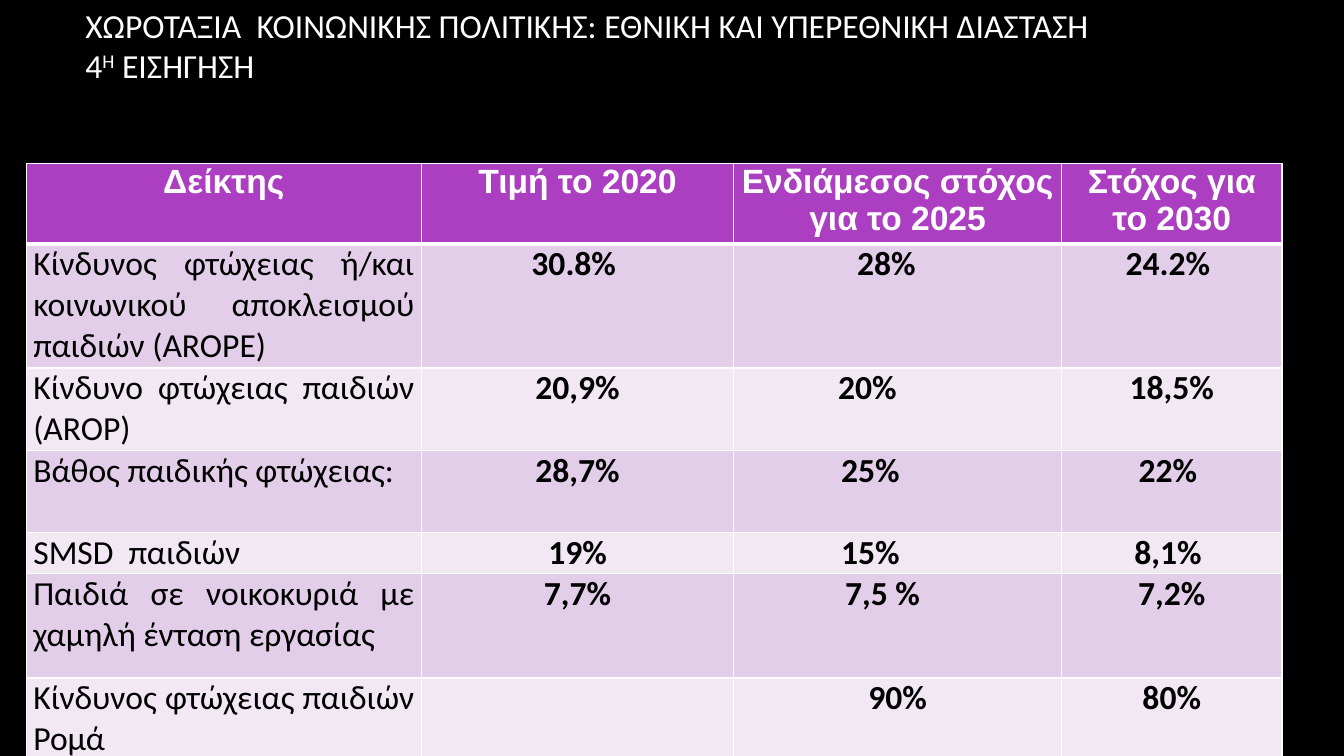
import pptx
import pptx.dml.color
import pptx.enum.text
import pptx.oxml
import pptx.util
from pptx.util import Cm

ALIGN = pptx.enum.text.PP_ALIGN
NAMESPACE = "http://schemas.openxmlformats.org/drawingml/2006/main"
HEADINGS = ["Δείκτης", "Τιμή το 2020", "Ενδιάμεσος στόχος για το 2025", "Στόχος για το 2030"]
INDICATORS = [
    ["Κίνδυνος φτώχειας ή/και κοινωνικού αποκλεισμού παιδιών (AROPE)", "30.8% ", "28%", "24.2% "],
    ["Κίνδυνο φτώχειας παιδιών (AROP)", "20,9%", "20%", "18,5%"],
    ["Βάθος παιδικής φτώχειας:", "28,7%", "25%", "22% "],
    ["SMSD  παιδιών", "19%", "15%", "8,1% "],
    ["Παιδιά σε νοικοκυριά με χαμηλή ένταση εργασίας", "7,7%", "7,5 %", "7,2%"],
    ["Κίνδυνος φτώχειας παιδιών Ρομά", "", "90%", "80%"],
]
COLUMN_WIDTHS = [9.96, 7.87, 8.26, 5.56]
ROW_HEIGHTS = [1.95, 3.13, 2.07, 2.07, 1.04, 2.63, 2.07]
TARGET_SHIFTS = [0, 0.56, 1.52, 1.37, 1.37, 0.76, 0]


def color(value):
    """Turn a hex string into a colour."""
    return pptx.dml.color.RGBColor.from_string(value)


def style(paragraph, name, value, bold=False):
    """Set the font of a paragraph."""
    paragraph.font.name = name
    paragraph.font.size = pptx.util.Pt(24)
    paragraph.font.bold = bold
    paragraph.font.color.rgb = color(value)


def add_title(slide):
    """Add the two-line lecture title."""
    shape = slide.shapes.add_textbox(Cm(1.9), Cm(0), Cm(28.14), Cm(2.26))
    frame = shape.text_frame
    frame.word_wrap = True
    frame.vertical_anchor = pptx.enum.text.MSO_ANCHOR.MIDDLE
    paragraph = frame.paragraphs[0]
    paragraph.add_run().text = "ΧΩΡΟΤΑΞΙΑ  ΚΟΙΝΩΝΙΚΗΣ ΠΟΛΙΤΙΚΗΣ: ΕΘΝΙΚΗ ΚΑΙ ΥΠΕΡΕΘΝΙΚΗ ΔΙΑΣΤΑΣΗ"
    paragraph.add_line_break()
    paragraph.add_run().text = "4"
    ordinal = paragraph.add_run()
    ordinal.text = "Η"
    ordinal.font._element.set("baseline", "30000")
    paragraph.add_run().text = " ΕΙΣΗΓΗΣΗ"
    style(paragraph, "Calibri", "FFFFFF")


def set_borders(cell, top, bottom):
    """Give a cell white borders, with top and bottom widths in points."""
    properties = cell._tc.get_or_add_tcPr()
    sides = [("L", 1), ("R", 1), ("T", top), ("B", bottom)]
    for index, (side, width) in enumerate(sides):
        properties.insert(index, pptx.oxml.parse_xml(
            f'<a:ln{side} xmlns:a="{NAMESPACE}" w="{pptx.util.Pt(width)}">'
            f'<a:solidFill><a:srgbClr val="FFFFFF"/></a:solidFill></a:ln{side}>'))


def fill_cell(cell, text, row, column):
    """Write and format one table cell."""
    header = row == 0
    cell.margin_left = cell.margin_right = Cm(0.18)
    cell.margin_top = cell.margin_bottom = Cm(0)
    if column == 2:
        cell.margin_right = Cm(0.18 + TARGET_SHIFTS[row])
    cell.fill.solid()
    cell.fill.fore_color.rgb = color("AC3EC1" if header else "E3CEE9" if row % 2 else "F1E8F4")
    set_borders(cell, 3 if row == 1 else 1, 3 if header else 1)
    cell.text = text
    paragraph = cell.text_frame.paragraphs[0]
    label = column == 0 and not header
    paragraph.alignment = ALIGN.JUSTIFY if label else ALIGN.CENTER
    style(paragraph, "Arial" if header else "Calibri",
          "FFFFFF" if header else "000000", not label)


def add_indicator_table(slide):
    """Add the table of child poverty indicators and targets."""
    rows = [HEADINGS] + INDICATORS
    table = slide.shapes.add_table(
        len(rows), len(HEADINGS), Cm(0.66), Cm(4.11),
        Cm(sum(COLUMN_WIDTHS)), Cm(sum(ROW_HEIGHTS))).table
    table.horz_banding = False
    for column, width in zip(table.columns, COLUMN_WIDTHS):
        column.width = Cm(width)
    for row, height in zip(table.rows, ROW_HEIGHTS):
        row.height = Cm(height)
    for row, texts in enumerate(rows):
        for column, text in enumerate(texts):
            fill_cell(table.cell(row, column), text, row, column)


def main():
    """Build the slide and save it."""
    presentation = pptx.Presentation()
    presentation.slide_width = Cm(33.87)
    presentation.slide_height = Cm(19.05)
    slide = presentation.slides.add_slide(presentation.slide_layouts[6])
    slide.background.fill.solid()
    slide.background.fill.fore_color.rgb = color("000000")
    add_title(slide)
    add_indicator_table(slide)
    presentation.save("out.pptx")


if __name__ == "__main__":
    main()
